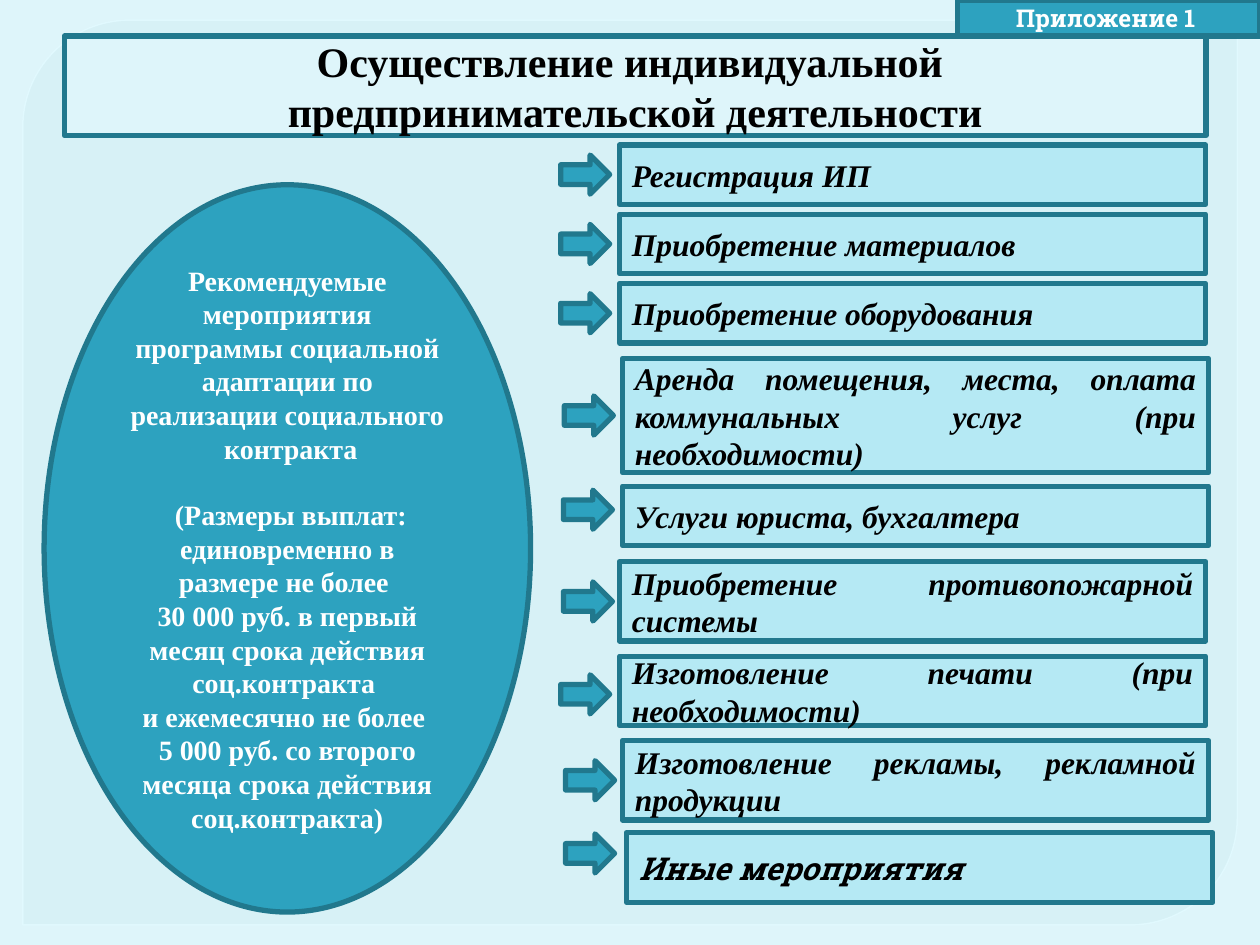
from lxml import etree
from pptx import Presentation
from pptx.dml.color import RGBColor
from pptx.enum import shapes, text
from pptx.oxml import ns
from pptx.util import Pt

C = {"page": "DEF5FA", "panel": "D4EFF5", "panel_line": "E2FAFF", "accent": "2DA2BF",
     "line": "21788D", "item": "B5E9F4", "black": "000000", "white": "FFFFFF"}
SERIF, SLAB = "Times New Roman", "Roboto Slab"
MSO, ALIGN = shapes.MSO_SHAPE, text.PP_ALIGN


def add_box(kind, box, fill, line="line", width=3):
    sp = s.shapes.add_shape(kind, *[Pt(v) for v in box])
    sp.shadow.inherit = False
    paint(sp, fill, line, width)
    return sp


def paint(sp, fill, line="line", width=3, paras=(), align=ALIGN.CENTER, color="black", **font):
    sp.fill.solid()
    sp.fill.fore_color.rgb = RGBColor.from_string(C[fill])
    sp.line.color.rgb = RGBColor.from_string(C[line])
    sp.line.width = Pt(width)
    tf = sp.text_frame
    tf.word_wrap = True
    tf.auto_size = text.MSO_AUTO_SIZE.NONE
    tf.vertical_anchor = text.MSO_ANCHOR.MIDDLE
    for i, words in enumerate(paras):
        p = tf.add_paragraph() if i else tf.paragraphs[0]
        p.text = words
        p.alignment = align
        for r in p.runs:
            r.font.color.rgb = RGBColor.from_string(C[color])
            for name, value in font.items():
                setattr(r.font, name, value)


prs = Presentation()
prs.slide_width, prs.slide_height = Pt(720), Pt(540)
s = prs.slides.add_slide(prs.slide_layouts[5])
s.background.fill.solid()
s.background.fill.fore_color.rgb = RGBColor.from_string(C["page"])

# Translucent panel behind everything
panel = add_box(MSO.ROUND_2_DIAG_RECTANGLE, (13, 11.5, 694, 517), "panel", "panel_line", 0.87)
panel.adjustments[0], panel.adjustments[1] = 0.118, 0
for color, alpha in zip(panel._element.spPr.iter(ns.qn("a:srgbClr")), (65000, 88000)):
    etree.SubElement(color, ns.qn("a:alpha"), val=str(alpha))
s.shapes._spTree.insert(2, panel._element)

# Title
title = s.shapes.title
title.left, title.top, title.width, title.height = Pt(36.8), Pt(20.6), Pt(652.3), Pt(56.9)
paint(title, "page", paras=["Осуществление индивидуальной ", "предпринимательской деятельности"],
      size=Pt(24), name=SERIF, bold=True)

# Programme ellipse
ellipse = add_box(MSO.OVAL, (25.2, 105.6, 278, 415.6), "accent")
paint(ellipse, "accent", color="white", size=Pt(16), name=SERIF, bold=True, paras=[
    "Рекомендуемые мероприятия программы социальной адаптации по реализации социального  контракта",
    " (Размеры выплат: единовременно в размере не более \v30 000 руб. в первый месяц "
    "срока действия соц.контракта ",
    "и ежемесячно не более ",
    "5 000 руб. со второго месяца срока действия соц.контракта)"])
ellipse.text_frame.paragraphs[1].space_before = Pt(19)

# Measures: text, box left, top, height, arrow left, arrow shift from the box's middle
measures = [
    ("Регистрация ИП", 354, 82.8, 34, 320.4, 0),
    ("Приобретение материалов", 354, 122.4, 34, 320.4, 0),
    ("Приобретение оборудования", 354, 162, 34, 320.4, 0),
    ("Аренда помещения, места, оплата коммунальных услуг (при необходимости)",
     355.7, 204.8, 65.3, 322.5, 0),
    ("Услуги юриста, бухгалтера", 355.7, 277.8, 34, 322, -3.5),
    ("Приобретение противопожарной системы", 354, 321, 45.4, 322, 0),
    ("Изготовление печати (при необходимости)", 354, 375, 39.6, 320.4, 2),
    ("Изготовление рекламы, рекламной продукции", 355.7, 423.2, 45.4, 323.2, 0),
    ("Иные мероприятия", 358, 475.8, 39.8, 323.2, -8),
]
ARROW_W, ARROW_H = 28, 22.4
for words, left, top, height, arrow_left, shift in measures:
    item = add_box(MSO.RECTANGLE, (left, top, 335, height), "item")
    paint(item, "item", paras=[words], align=ALIGN.JUSTIFY, size=Pt(18), bold=True, italic=True,
          name=SLAB if words == measures[-1][0] else SERIF)
    arrow_top = top + (height - ARROW_H) / 2 + shift
    add_box(MSO.RIGHT_ARROW, (arrow_left, arrow_top, ARROW_W, ARROW_H), "accent")

# Appendix label
label = add_box(MSO.RECTANGLE, (547, 0, 173, 20.6), "accent")
paint(label, "accent", paras=["Приложение 1 "], color="white", size=Pt(14), name=SLAB, bold=True)

prs.save("out.pptx")
